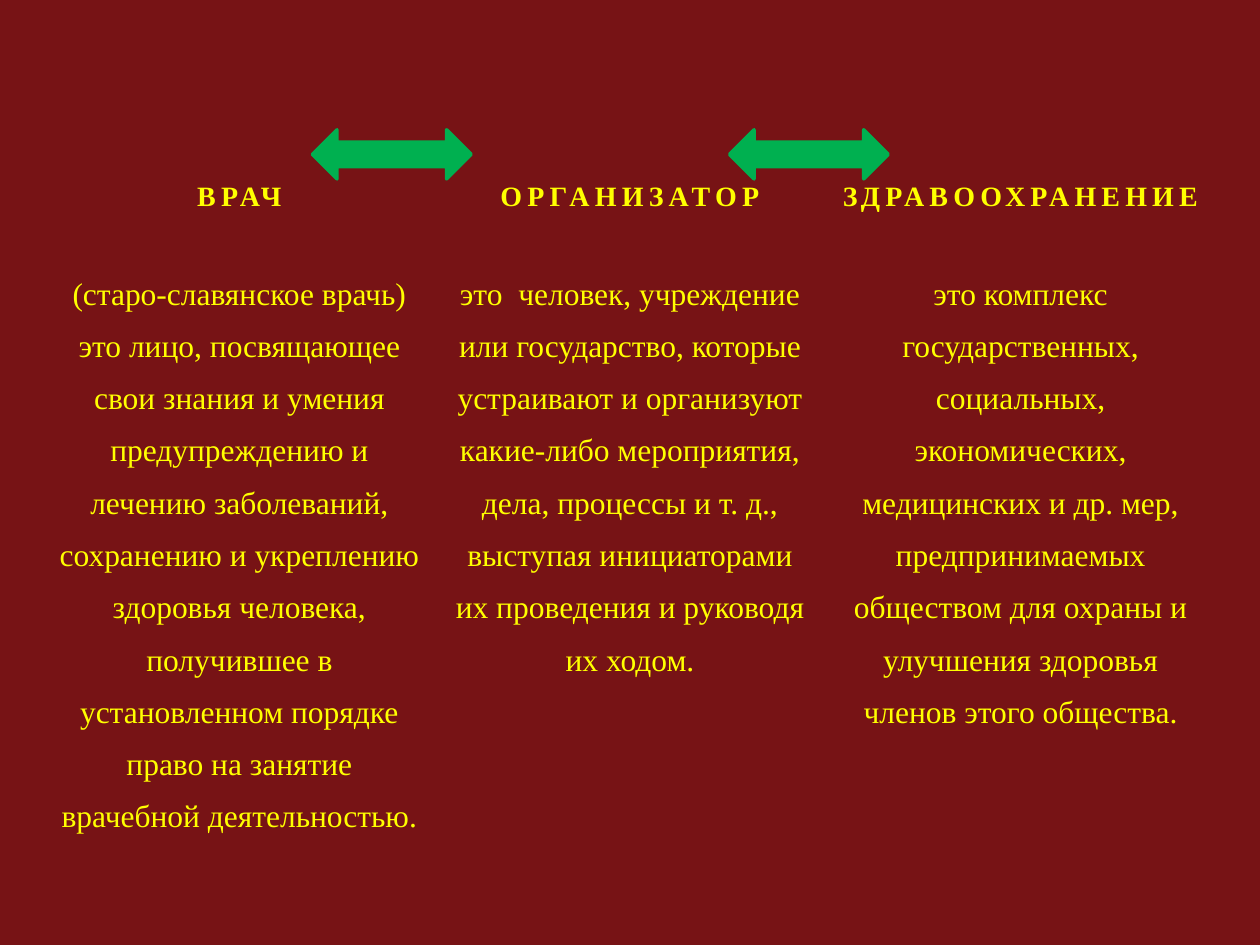
"""Build a slide defining physician, organizer and health care in three columns."""
from pptx import Presentation
from pptx.dml.color import RGBColor
from pptx.enum.shapes import MSO_SHAPE
from pptx.enum.text import PP_ALIGN
from pptx.oxml.ns import qn
from pptx.util import Inches, Pt

BACKGROUND, YELLOW, GREEN = "771315", "FFFF00", "00B050"
NO_STYLE_NO_GRID = "{2D5ABB26-0587-4C30-8999-92F81FD0307C}"
TERMS = [
    ("ВРАЧ",
     "(старо-славянское врачь) это лицо, посвящающее свои знания и умения "
     "предупреждению и лечению заболеваний, сохранению и укреплению здоровья "
     "человека, получившее в установленном порядке право на занятие "
     "врачебной деятельностью."),
    ("ОРГАНИЗАТОР",
     "это  человек, учреждение или государство, которые устраивают и "
     "организуют какие-либо мероприятия, дела, процессы и т. д., выступая "
     "инициаторами их проведения и руководя их ходом."),
    ("ЗДРАВООХРАНЕНИЕ",
     "это комплекс государственных, социальных, экономических, медицинских "
     "и др. мер, предпринимаемых обществом для охраны и улучшения здоровья "
     "членов этого общества."),
]


def paint(color_format, color):
    color_format.rgb = RGBColor.from_string(color)


def write(cell, text, size, bold=False, line_spacing=1.0, tracking=0):
    cell.fill.background()
    para = cell.text_frame.paragraphs[0]
    para.alignment = PP_ALIGN.CENTER
    para.line_spacing = line_spacing
    span = para.add_run()
    span.text = text
    span.font.name = "Times New Roman"
    span.font.size = Pt(size)
    span.font.bold = bold
    paint(span.font.color, YELLOW)
    span._r.get_or_add_rPr().set("spc", str(tracking * 100))


deck = Presentation()
deck.slide_width, deck.slide_height = Inches(10), Inches(7.5)
page = deck.slides.add_slide(deck.slide_layouts[6])
page.background.fill.solid()
paint(page.background.fill.fore_color, BACKGROUND)

table = page.shapes.add_table(2, len(TERMS), Inches(0.35), Inches(1.39),
                              Inches(9.3), Inches(5.11)).table
table.first_row = table.horz_banding = False
table._tbl.tblPr.find(qn("a:tableStyleId")).text = NO_STYLE_NO_GRID
table.rows[0].height, table.rows[1].height = Inches(0.62), Inches(4.49)
for column, (term, definition) in enumerate(TERMS):
    table.columns[column].width = Inches(3.1)
    write(table.cell(0, column), term, 16, bold=True, tracking=3)
    write(table.cell(1, column), definition, 18, line_spacing=1.5)

for left in (2.48, 5.79):
    arrow = page.shapes.add_shape(MSO_SHAPE.LEFT_RIGHT_ARROW, Inches(left),
                                  Inches(1.03), Inches(1.26), Inches(0.39))
    arrow.shadow.inherit = False
    arrow.fill.solid()
    paint(arrow.fill.fore_color, GREEN)
    paint(arrow.line.color, GREEN)
    arrow.line.width = Pt(2)

deck.save("out.pptx")
